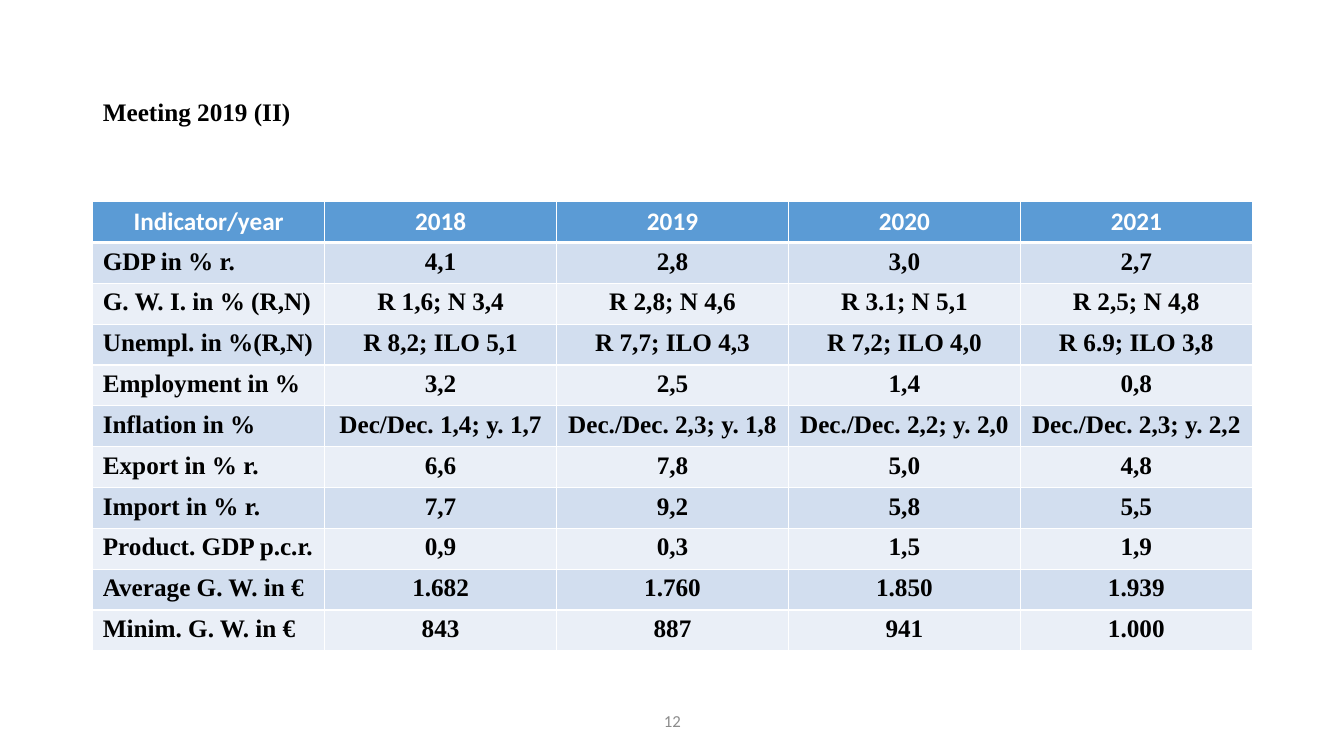
from lxml import etree
from pptx import Presentation
from pptx import util as u
from pptx.dml.color import RGBColor
from pptx.enum import text
from pptx.oxml import ns

INDICATORS = [
    ("Indicator/year", "2018", "2019", "2020", "2021"),
    ("GDP in % r.", "4,1", "2,8", "3,0", "2,7"),
    ("G. W. I. in % (R,N)", "R 1,6; N 3,4", "R 2,8; N 4,6", "R 3.1; N 5,1", "R 2,5; N 4,8"),
    ("Unempl. in %(R,N)", "R 8,2; ILO 5,1", "R 7,7; ILO 4,3", "R 7,2; ILO 4,0", "R 6.9; ILO 3,8"),
    ("Employment in %", "3,2", "2,5", "1,4", "0,8"),
    ("Inflation in %", "Dec/Dec. 1,4; y. 1,7", "Dec./Dec. 2,3; y. 1,8",
     "Dec./Dec. 2,2; y. 2,0", "Dec./Dec. 2,3; y. 2,2"),
    ("Export in % r.", "6,6", "7,8", "5,0", "4,8"),
    ("Import in % r.", "7,7", "9,2", "5,8", "5,5"),
    ("Product. GDP p.c.r.", "0,9", "0,3", "1,5", "1,9"),
    ("Average G. W. in €", "1.682", "1.760", "1.850", "1.939"),
    ("Minim. G. W. in €", "843", "887", "941", "1.000"),
]


def rgb(value):
    return RGBColor.from_string(value)


class IndicatorSlide:
    """Holds the style and the slide, with a method for each kind of element."""

    HEAD_FONT, BODY_FONT = "Calibri", "Times New Roman"
    BLACK, WHITE, GREY = "000000", "FFFFFF", "8C8C8C"
    HEADER, BANDS = "5B9BD5", ("EAEFF7", "D2DEEF")

    def __init__(self, prs):
        self.s = prs.slides.add_slide(prs.slide_layouts[5])

    def label(self, p, content, font, color, size=18, bold=True, align=text.PP_ALIGN.CENTER):
        p.text = content
        p.alignment = align
        p.font.name, p.font.size, p.font.bold = font, u.Pt(size), bold
        p.font.color.rgb = rgb(color)

    def place(self, sp, left, top, width, height):
        sp.left, sp.top = u.Inches(left), u.Inches(top)
        sp.width, sp.height = u.Inches(width), u.Inches(height)
        tf = sp.text_frame
        tf.word_wrap = True
        tf.vertical_anchor = text.MSO_ANCHOR.MIDDLE
        return tf.paragraphs[0]

    def title(self, content, *box):
        p = self.place(self.s.shapes.title, *box)
        self.label(p, content, self.BODY_FONT, self.BLACK, align=text.PP_ALIGN.LEFT)
        p.line_spacing = 0.9

    def page_number(self, content, *box):
        sp = self.s.shapes.add_textbox(0, 0, 0, 0)
        self.label(self.place(sp, *box), content, self.HEAD_FONT, self.GREY, 12, False)

    def borders(self, cell, top, bottom):
        tc_pr = cell._tc.get_or_add_tcPr()
        widths = {"lnL": 1, "lnR": 1, "lnT": top, "lnB": bottom}
        for i, (side, width) in enumerate(widths.items()):
            ln = etree.Element(ns.qn("a:" + side), w=str(u.Pt(width)))
            fill = etree.SubElement(ln, ns.qn("a:solidFill"))
            etree.SubElement(fill, ns.qn("a:srgbClr"), val=self.WHITE)
            tc_pr.insert(i, ln)

    def table(self, rows, *box):
        frame = self.s.shapes.add_table(len(rows), len(rows[0]), *map(u.Inches, box))
        for r, row in enumerate(rows):
            for c, content in enumerate(row):
                cell = frame.table.cell(r, c)
                header = r == 0
                cell.fill.solid()
                cell.fill.fore_color.rgb = rgb(self.HEADER if header else self.BANDS[r % 2])
                self.borders(cell, 3 if r == 1 else 1, 3 if header else 1)
                self.label(
                    cell.text_frame.paragraphs[0], content,
                    self.HEAD_FONT if header else self.BODY_FONT,
                    self.WHITE if header else self.BLACK,
                    align=text.PP_ALIGN.CENTER if header or c else text.PP_ALIGN.LEFT)


def main():
    prs = Presentation()
    prs.slide_width, prs.slide_height = u.Inches(13.33), u.Inches(7.5)
    slide = IndicatorSlide(prs)
    slide.title("Meeting 2019 (II)", 0.92, 0.4, 11.5, 1.45)
    slide.table(INDICATORS, 0.92, 2, 11.5, 4.46)
    slide.page_number("12", 4.42, 6.95, 4.5, 0.4)
    prs.save("out.pptx")


if __name__ == "__main__":
    main()
